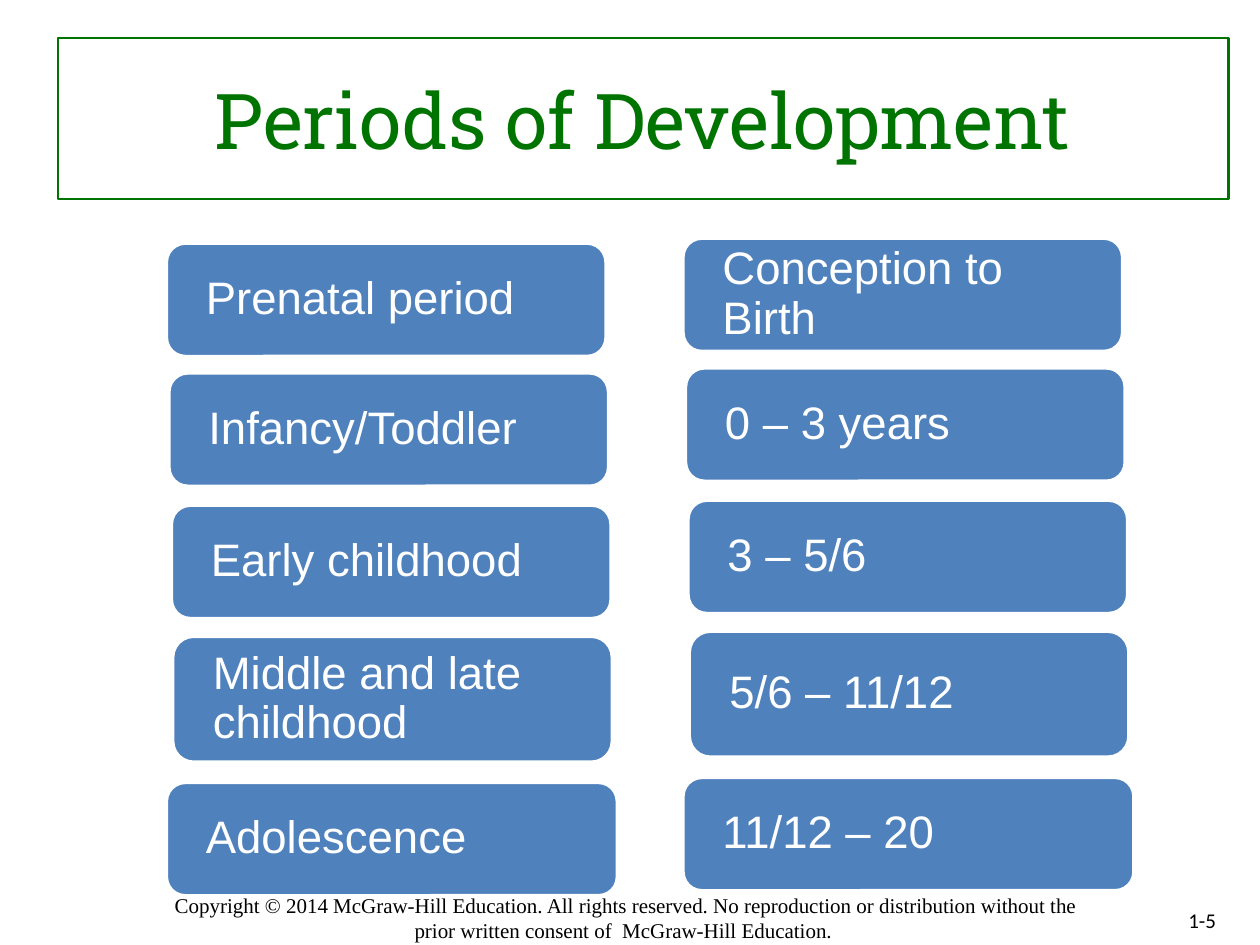
from pptx import Presentation
from pptx.dml.color import RGBColor
from pptx.enum.shapes import MSO_SHAPE
from pptx.enum.text import MSO_ANCHOR, PP_ALIGN
from pptx.util import Inches, Pt

ROUNDED = MSO_SHAPE.ROUNDED_RECTANGLE
MIDDLE, TOP = MSO_ANCHOR.MIDDLE, MSO_ANCHOR.TOP
LEFT, CENTER, RIGHT = PP_ALIGN.LEFT, PP_ALIGN.CENTER, PP_ALIGN.RIGHT

GREEN = RGBColor(0x00, 0x74, 0x00)
BLUE = RGBColor(0x4F, 0x81, 0xBD)
WHITE = RGBColor(0xFF, 0xFF, 0xFF)
BLACK = RGBColor(0x00, 0x00, 0x00)

TITLE_ONLY = 5
AGE_SHIFT_X, AGE_SHIFT_Y = 4.1, -0.04  # age box relative to its period box
BOX_INSET = 0.27

# Period, age range, left, top, width, height of the period box
PERIODS = [
    ("Prenatal period", "Conception to Birth", 1.32, 1.93, 3.49, 0.9),
    ("Infancy/Toddler", "0 – 3 years", 1.34, 2.96, 3.49, 0.9),
    ("Early childhood", "3 – 5/6", 1.36, 4.01, 3.49, 0.9),
    ("Middle and late childhood", "5/6 – 11/12", 1.37, 5.05, 3.49, 1),
    ("Adolescence", "11/12 – 20", 1.32, 6.21, 3.58, 0.9),
]
COPYRIGHT = (
    "Copyright © 2014 McGraw-Hill Education. All rights reserved. "
    "No reproduction or distribution without the prior written consent of  "
    "McGraw-Hill Education. "
)


class SlideBuilder:
    """Holds the slide and its style."""

    def __init__(self, slide):
        self.slide = slide

    def add_text(self, shape, text, font, size, color, align, anchor):
        frame = shape.text_frame
        frame.word_wrap = True
        frame.vertical_anchor = anchor
        paragraph = frame.paragraphs[0]
        paragraph.alignment = align
        run = paragraph.add_run()
        run.text = text
        run.font.name = font
        run.font.size = Pt(size)
        run.font.color.rgb = color
        return paragraph

    def title(self, text, left, top, width, height):
        title = self.slide.shapes.title
        title.left, title.top = Inches(left), Inches(top)
        title.width, title.height = Inches(width), Inches(height)
        title.line.color.rgb = GREEN
        title.line.width = Pt(1.25)
        self.add_text(title, text, "Roboto Slab", 44, GREEN, CENTER, MIDDLE)

    def note(self, text, left, top, width, height, font, align, anchor, inset):
        note = self.slide.shapes.add_textbox(
            Inches(left), Inches(top), Inches(width), Inches(height))
        frame = note.text_frame
        frame.margin_left = frame.margin_right = Inches(inset)
        frame.margin_top = frame.margin_bottom = Inches(inset / 2)
        self.add_text(note, text, font, 12, BLACK, align, anchor)

    def box(self, text, left, top, width, height):
        box = self.slide.shapes.add_shape(
            ROUNDED, Inches(left), Inches(top), Inches(width), Inches(height))
        box.shadow.inherit = False
        box.fill.solid()
        box.fill.fore_color.rgb = BLUE
        box.line.color.rgb = WHITE
        box.line.width = Pt(2)
        frame = box.text_frame
        frame.margin_left = frame.margin_right = Inches(BOX_INSET)
        frame.margin_top = frame.margin_bottom = 0
        paragraph = self.add_text(box, text, "Arial", 26, WHITE, LEFT, MIDDLE)
        paragraph.line_spacing = 0.9


def main():
    prs = Presentation()
    prs.slide_width, prs.slide_height = Inches(10), Inches(7.5)
    builder = SlideBuilder(prs.slides.add_slide(prs.slide_layouts[TITLE_ONLY]))

    # Title and footer
    builder.title("Periods of Development", 0.46, 0.3, 9.29, 1.28)
    builder.note(COPYRIGHT, 1.27, 7.08, 7.4, 0.4,
                 "Times New Roman", CENTER, TOP, 0)
    builder.note("1-5", 7.42, 7.1, 2.33, 0.4, "Calibri", RIGHT, MIDDLE, 0.1)

    # Periods on the left, ages on the right
    for period, age, left, top, width, height in PERIODS:
        builder.box(period, left, top, width, height)
        builder.box(age, left + AGE_SHIFT_X, top + AGE_SHIFT_Y, width, height)

    prs.save("out.pptx")


if __name__ == "__main__":
    main()
